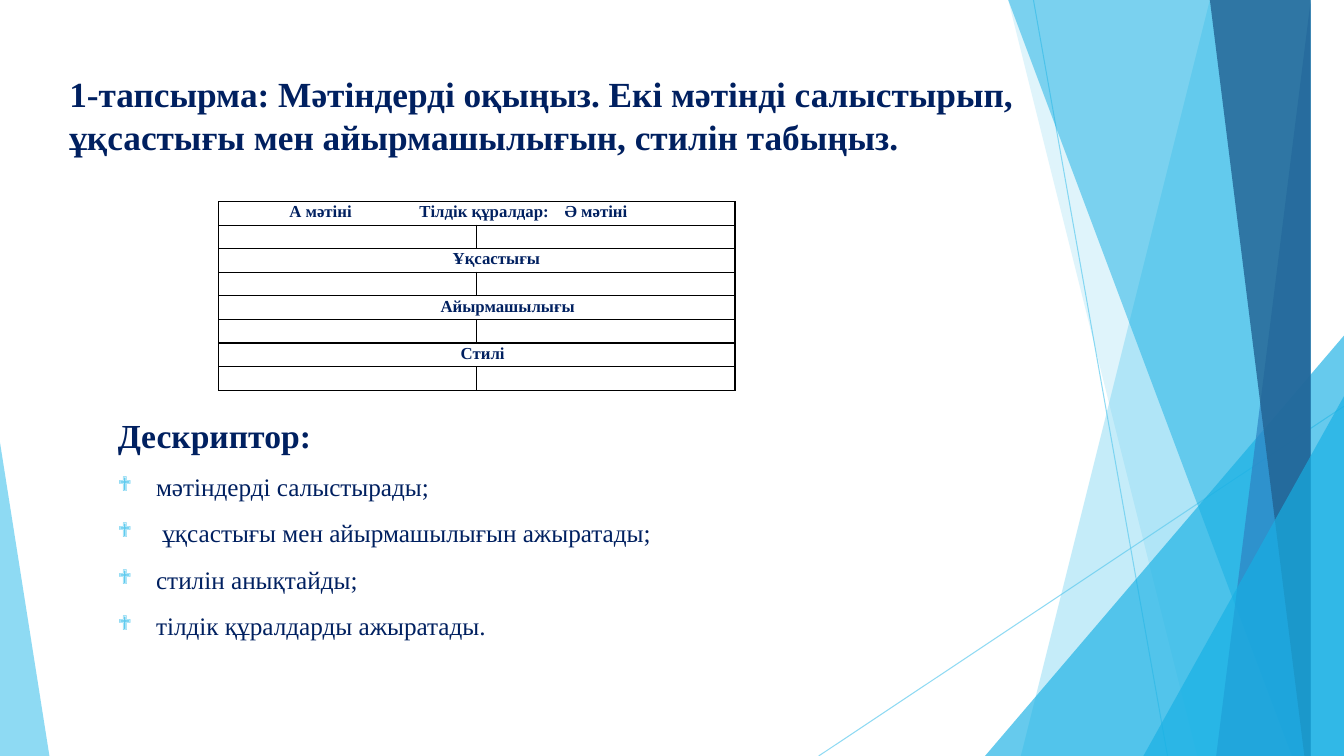
from lxml import etree
from pptx import Presentation
from pptx.dml.color import RGBColor
from pptx.enum.shapes import MSO_CONNECTOR, MSO_SHAPE
from pptx.enum.text import MSO_ANCHOR, PP_ALIGN
from pptx.oxml.ns import qn
from pptx.util import Inches, Pt

WIDTH, HEIGHT = 13.33, 7.5
FONT = "Times New Roman"
NAVY = RGBColor(0x00, 0x20, 0x60)
SKY = RGBColor(0x5F, 0xCB, 0xEF)
CYAN = RGBColor(0x17, 0xB0, 0xE4)
BLUE = RGBColor(0x2E, 0x83, 0xC3)
DEEP_BLUE = RGBColor(0x22, 0x62, 0x92)
BLACK = RGBColor(0, 0, 0)

TITLE = ("1-тапсырма: Мәтіндерді оқыңыз. Екі мәтінді салыстырып, "
         "ұқсастығы мен айырмашылығын, стилін табыңыз.")
DESCRIPTOR_HEADING = "Дескриптор:"
DESCRIPTORS = [
    "мәтіндерді салыстырады;",
    " ұқсастығы мен айырмашылығын ажыратады;",
    "стилін анықтайды;",
    "тілдік құралдарды ажыратады.",
]
# Each heading row: labels with their offsets from the cell's text edge
HEADING_ROWS = [
    [("А мәтіні", 0.63), ("Тілдік құралдар:", 1.92), ("Ә мәтіні", 3.36)],
    [("Ұқсастығы", 2.25)],
    [("Айырмашылығы", 2.13)],
    [("Стилі", 2.33)],
]
TABLE_LEFT, TABLE_TOP, COLUMN_WIDTH, ROW_HEIGHT = 2.17, 2, 2.56, 0.234

# Thin lines: start and end points
RAYS = [((10.25, 0), (11.58, HEIGHT)), ((WIDTH, 4.03), (8.12, HEIGHT))]
# Bands reach the right edge: x at the top, x at the bottom, colour, opacity
# Triangles stand on the bottom edge: left, top, right, apex, colour, opacity
DECORATION = [
    ("band", 12.28, 10.04, SKY, 36),
    ("band", 10.5, 11.83, SKY, 20),
    ("triangle", 9.77, 3.33, WIDTH, 1, CYAN, 66),
    ("band", 10.21, 12.91, CYAN, 50),
    ("band", 13.03, 11.92, BLUE, 70),
    ("band", 11.96, 13.18, DEEP_BLUE, 80),
    ("triangle", 11.34, 3.93, WIDTH, 1, CYAN, 66),
    ("triangle", 0, 4.39, 0.49, 0, SKY, 70),
]


def set_opacity(fill_parent, percent):
    color = next(fill_parent.iter(qn("a:srgbClr")))
    etree.SubElement(color, qn("a:alpha"), val=str(percent * 1000))


def add_ray(slide, start, end):
    points = [Inches(value) for value in (*start, *end)]
    line = slide.shapes.add_connector(MSO_CONNECTOR.STRAIGHT, *points)
    line.line.color.rgb = SKY
    line.line.width = Pt(0.75)
    properties = line._element.spPr
    set_opacity(properties, 70)
    etree.SubElement(properties, qn("a:effectLst"))


def add_band(slide, top_x, bottom_x):
    builder = slide.shapes.build_freeform(top_x, 0, scale=Inches(1))
    builder.add_line_segments([(WIDTH, 0), (WIDTH, HEIGHT), (bottom_x, HEIGHT)])
    return builder.convert_to_shape()


def add_triangle(slide, left, top, right, apex):
    box = [Inches(value) for value in (left, top, right - left, HEIGHT - top)]
    shape = slide.shapes.add_shape(MSO_SHAPE.ISOSCELES_TRIANGLE, *box)
    shape.adjustments[0] = apex
    return shape


def add_decoration(slide):
    for start, end in RAYS:
        add_ray(slide, start, end)
    builders = {"band": add_band, "triangle": add_triangle}
    for kind, *geometry, color, opacity in DECORATION:
        shape = builders[kind](slide, *geometry)
        shape.shadow.inherit = False
        shape.line.fill.background()
        shape.fill.solid()
        shape.fill.fore_color.rgb = color
        set_opacity(shape._element.spPr, opacity)


def style_font(paragraph, size, bold):
    font = paragraph.font
    font.name, font.size, font.bold = FONT, Pt(size), bold
    font.color.rgb = NAVY


def add_text_frame(slide, left, top, width, height):
    box = slide.shapes.add_textbox(*map(Inches, (left, top, width, height)))
    frame = box.text_frame
    frame.word_wrap = True
    return frame


def add_bullet(paragraph):
    properties = paragraph._p.get_or_add_pPr()
    properties.set("marL", str(Inches(0.38)))
    properties.set("indent", str(-Inches(0.38)))
    bullet = [etree.Element(qn("a:buClr")),
              etree.Element(qn("a:buSzPct"), val="80000"),
              etree.Element(qn("a:buFont"), typeface="Wingdings"),
              etree.Element(qn("a:buChar"), char="❖")]
    etree.SubElement(bullet[0], qn("a:srgbClr"), val=str(SKY))
    default_font = properties.find(qn("a:defRPr"))
    for element in bullet:
        default_font.addprevious(element)


def add_descriptors(slide):
    frame = add_text_frame(slide, 1.07, 4.04, 9.07, 2.57)
    heading = frame.paragraphs[0]
    heading.text = DESCRIPTOR_HEADING
    heading.line_spacing = 1.07
    style_font(heading, 24, True)
    for text in DESCRIPTORS:
        paragraph = frame.add_paragraph()
        paragraph.text = text
        paragraph.alignment = PP_ALIGN.JUSTIFY
        paragraph.line_spacing = 1.07
        paragraph.space_before = Pt(10)
        style_font(paragraph, 18, False)
        add_bullet(paragraph)


def add_borders(cell):
    properties = cell._tc.get_or_add_tcPr()
    for position, side in enumerate(("lnL", "lnR", "lnT", "lnB")):
        border = etree.Element(qn(f"a:{side}"), w=str(Pt(1)))
        fill = etree.SubElement(border, qn("a:solidFill"))
        etree.SubElement(fill, qn("a:srgbClr"), val=str(BLACK))
        properties.insert(position, border)


def style_cell(cell):
    cell.margin_left = cell.margin_right = Inches(0.07)
    cell.margin_top = cell.margin_bottom = 0
    cell.vertical_anchor = MSO_ANCHOR.TOP
    cell.fill.background()
    add_borders(cell)
    paragraph = cell.text_frame.paragraphs[0]
    paragraph.line_spacing = 1.07
    style_font(paragraph, 12, True)
    if not cell.text_frame.text:
        etree.SubElement(paragraph._p, qn("a:endParaRPr"), sz="1200")


def write_labels(cell, labels):
    """Place each label at its own tab stop."""
    paragraph = cell.text_frame.paragraphs[0]
    paragraph.text = "".join("\t" + text for text, _ in labels)
    default_font = paragraph._p.pPr.find(qn("a:defRPr"))
    stops = etree.Element(qn("a:tabLst"))
    for _, offset in labels:
        etree.SubElement(stops, qn("a:tab"), pos=str(Inches(offset)), algn="l")
    default_font.addprevious(stops)


def add_comparison_table(slide):
    row_count = 2 * len(HEADING_ROWS)
    box = (TABLE_LEFT, TABLE_TOP, 2 * COLUMN_WIDTH, row_count * ROW_HEIGHT)
    table = slide.shapes.add_table(row_count, 2, *map(Inches, box)).table
    table.first_row = table.horz_banding = False
    for cell in table.iter_cells():
        style_cell(cell)
    for index, labels in enumerate(HEADING_ROWS):
        heading = table.cell(2 * index, 0)
        heading.merge(table.cell(2 * index, 1))
        write_labels(heading, labels)


def main():
    presentation = Presentation()
    presentation.slide_width, presentation.slide_height = Inches(WIDTH), Inches(HEIGHT)
    slide = presentation.slides.add_slide(presentation.slide_layouts[6])
    add_decoration(slide)
    title = add_text_frame(slide, 0.59, 0.67, 9.8, 1.1).paragraphs[0]
    title.text = TITLE
    style_font(title, 25.2, True)
    add_descriptors(slide)
    add_comparison_table(slide)
    presentation.save("out.pptx")


if __name__ == "__main__":
    main()
